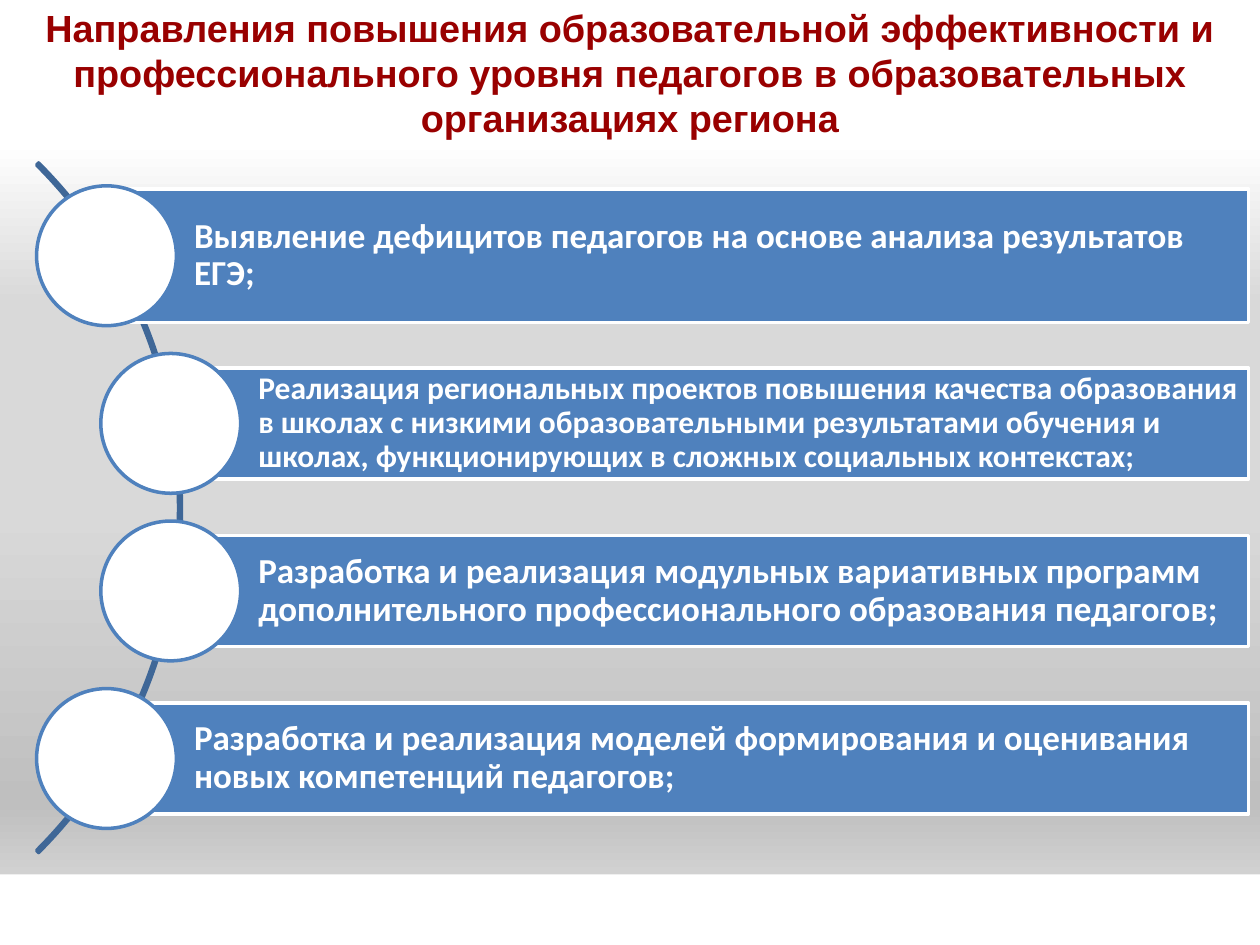
import pptx
import pptx.dml.color
import pptx.enum.shapes
import pptx.enum.text
import pptx.oxml
import pptx.oxml.ns
import pptx.util
from pptx.util import Inches

COLORS = {"title": "990000", "arc": "3F6797", "bar": "4F81BD", "white": "FFFFFF"}
BACKDROP = [(0, "FFFFFF"), (15, "FFFFFF"), (32, "D9D9D9"),
            (54, "D9D9D9"), (85, "BFBFBF"), (100, "E6E6E6")]
TITLE = ("Направления повышения образовательной эффективности и профессионального "
         "уровня педагогов в образовательных организациях региона")
DIRECTIONS = [
    ("Выявление дефицитов педагогов на основе анализа результатов ЕГЭ;", 0.84, 1.06, 20),
    ("Реализация региональных проектов повышения качества образования в школах "
     "с низкими образовательными результатами обучения и школах, "
     "функционирующих в сложных социальных контекстах;", 1.35, 0.88, 18),
    ("Разработка и реализация модульных вариативных программ дополнительного "
     "профессионального образования педагогов;", 1.35, 0.88, 20),
    ("Разработка и реализация моделей формирования и оценивания новых "
     "компетенций педагогов;", 0.84, 0.88, 20),
]
FIRST_CENTER, PITCH = 2.03, 1.33
BAR_RIGHT = 9.91
CIRCLE_SIZE, CIRCLE_OFFSET = 1.11, 0.55
SHAPES = pptx.enum.shapes.MSO_SHAPE
ALIGN = pptx.enum.text.PP_ALIGN


class DirectionsSlide:
    """Draws the parts of the directions slide in one shared style."""

    def __init__(self, slide):
        self.slide = slide

    def color(self, key):
        return pptx.dml.color.RGBColor.from_string(COLORS[key])

    def backdrop(self, stops):
        fill = self.slide.background.fill
        fill.gradient()
        fill.gradient_angle = 270
        stop_list = next(self.slide.background._cSld.iter(pptx.oxml.ns.qn("a:gsLst")))
        stop_list.clear()
        for percent, color in stops:
            stop_list.append(pptx.oxml.parse_xml(
                f'<a:gs {pptx.oxml.ns.nsdecls("a")} pos="{percent * 1000}">'
                f'<a:srgbClr val="{color}"/></a:gs>'))

    def shape(self, kind, left, top, width, height, fill=None, line=None):
        part = self.slide.shapes.add_shape(
            kind, Inches(left), Inches(top), Inches(width), Inches(height))
        part.shadow.inherit = False
        if fill:
            part.fill.solid()
            part.fill.fore_color.rgb = self.color(fill)
        else:
            part.fill.background()
        if line:
            part.line.color.rgb = self.color(line)
            part.line.width = pptx.util.Pt(2)
        else:
            part.line.fill.background()
        return part

    def text(self, part, words, size, font, color, align):
        frame = part.text_frame
        frame.word_wrap = True
        frame.vertical_anchor = pptx.enum.text.MSO_ANCHOR.MIDDLE
        paragraph = frame.paragraphs[0]
        paragraph.text = words
        paragraph.alignment = align
        paragraph.font.size = pptx.util.Pt(size)
        paragraph.font.name = font
        paragraph.font.bold = True
        paragraph.font.color.rgb = self.color(color)
        return paragraph

    def title(self, words):
        heading = self.shape(SHAPES.RECTANGLE, 0, 0, 10, 1.15, "white")
        paragraph = self.text(heading, words, 21.6, "Arial", "title", ALIGN.CENTER)
        outline = pptx.oxml.parse_xml(
            f'<a:ln {pptx.oxml.ns.nsdecls("a")} w="9525"><a:solidFill>'
            f'<a:srgbClr val="{COLORS["title"]}"/></a:solidFill></a:ln>')
        paragraph._p.pPr.find(pptx.oxml.ns.qn("a:defRPr")).insert(0, outline)

    def arc(self, left, top, size):
        curve = self.shape(SHAPES.BLOCK_ARC, left, top, size, size, line="arc")
        for index, value in enumerate((189, 27, 0.003)):
            curve.adjustments[index] = value

    def direction(self, words, left, center, height, size):
        bar = self.shape(SHAPES.RECTANGLE, left, center - height / 2,
                         BAR_RIGHT - left, height, "bar", "white")
        frame = bar.text_frame
        frame.margin_left = Inches(0.7)
        frame.margin_top = frame.margin_right = frame.margin_bottom = Inches(size / 360)
        self.text(bar, words, size, "Calibri", "white", ALIGN.LEFT).line_spacing = 0.9
        self.shape(SHAPES.OVAL, left - CIRCLE_OFFSET, center - CIRCLE_SIZE / 2,
                   CIRCLE_SIZE, CIRCLE_SIZE, "white", "bar")


def main():
    deck = pptx.Presentation()
    deck.slide_width, deck.slide_height = Inches(10), Inches(7.5)
    page = DirectionsSlide(deck.slides.add_slide(deck.slide_layouts[6]))
    page.backdrop(BACKDROP)
    page.shape(SHAPES.RECTANGLE, 0, 6.94, 10, 0.56, "white")
    page.title(TITLE)
    page.arc(-6.3, 0.16, 7.74)
    for row, (words, left, height, size) in enumerate(DIRECTIONS):
        page.direction(words, left, FIRST_CENTER + row * PITCH, height, size)
    deck.save("out.pptx")


if __name__ == "__main__":
    main()
